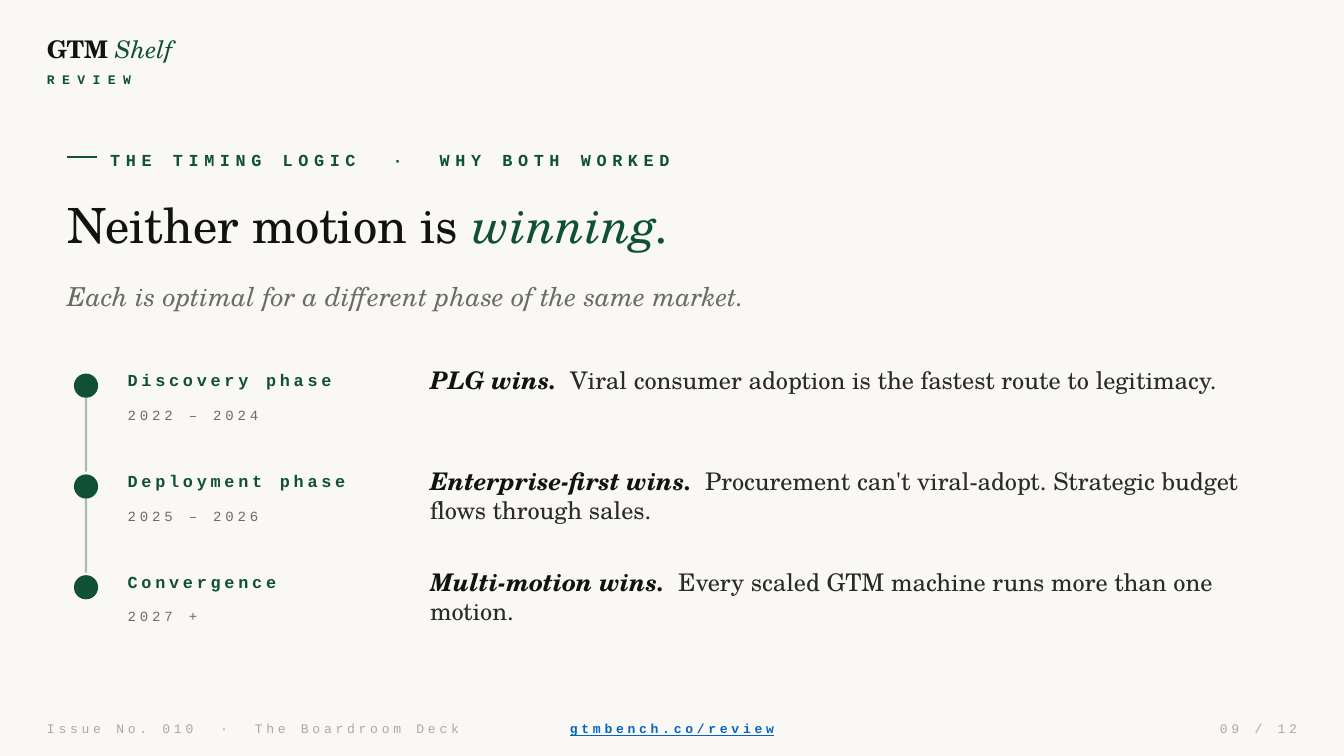
from dataclasses import dataclass

from lxml.etree import SubElement
from pptx import Presentation
from pptx.dml.color import RGBColor
from pptx.enum.shapes import MSO_CONNECTOR, MSO_SHAPE
from pptx.enum.text import MSO_ANCHOR, MSO_AUTO_SIZE, PP_ALIGN
from pptx.oxml.ns import qn
from pptx.util import Inches, Pt


@dataclass(frozen=True)
class Theme:
    serif: str = "TeX Gyre Schola"
    mono: str = "Courier New"
    paper: str = "FAF8F4"
    ink: str = "12130F"
    body: str = "2A2B25"
    muted: str = "6B6D63"
    faint: str = "A8AA9E"
    green: str = "0F5132"
    link: str = "0563C1"
    title_size: float = 26
    subtitle_size: float = 14
    body_size: float = 13
    label_size: float = 9
    date_size: float = 7.5
    small_size: float = 7
    rule_width: float = 1.25


T = Theme()

PHASES = [
    ("Discovery phase", "2022 – 2024", "PLG wins.  ",
     "Viral consumer adoption is the fastest route to legitimacy."),
    ("Deployment phase", "2025 – 2026", "Enterprise-first wins.  ",
     "Procurement can't viral-adopt. Strategic budget flows through sales."),
    ("Convergence", "2027 +", "Multi-motion wins.  ",
     "Every scaled GTM machine runs more than one motion."),
]


def write(shape, runs, font, size, anchor=MSO_ANCHOR.MIDDLE,
          align=PP_ALIGN.LEFT, spacing=0):
    """Fill a shape with one paragraph of (text, colour, style letters) runs."""
    tf = shape.text_frame
    tf.word_wrap = True
    tf.auto_size = MSO_AUTO_SIZE.NONE
    tf.vertical_anchor = anchor
    tf.margin_left = tf.margin_right = tf.margin_top = tf.margin_bottom = 0
    p = tf.paragraphs[0]
    p.alignment = align
    p.font.name, p.font.size = font, Pt(size)
    for text, color, style in runs:
        r = p.add_run()
        r.text = text
        r.font.name, r.font.size = font, Pt(size)
        r.font.color.rgb = RGBColor.from_string(color)
        r.font.bold = "b" in style
        r.font.italic = "i" in style
        r.font.underline = "u" in style
        if spacing:
            r.font._element.set("spc", str(spacing * 100))


def add_text(s, x, y, w, h, runs, font, size, **options):
    box = s.shapes.add_textbox(Inches(x), Inches(y), Inches(w), Inches(h))
    write(box, runs, font, size, **options)


def add_rule(s, x1, y1, x2, y2, opacity=100):
    rule = s.shapes.add_connector(MSO_CONNECTOR.STRAIGHT, Inches(x1), Inches(y1),
                                  Inches(x2), Inches(y2))
    rule.line.color.rgb = RGBColor.from_string(T.green)
    rule.line.width = Pt(T.rule_width)
    sp_pr = rule._element.spPr
    if opacity < 100:
        color = sp_pr.find(".//" + qn("a:srgbClr"))
        SubElement(color, qn("a:alpha")).set("val", str(opacity * 1000))
    SubElement(sp_pr, qn("a:effectLst"))


def add_masthead(s, x, y, w):
    add_text(s, x, y, w, 0.28, [("GTM ", T.ink, "b"), ("Shelf", T.green, "i")],
             T.serif, T.body_size)
    add_text(s, x, y + 0.26, w, 0.22, [("REVIEW", T.green, "b")],
             T.mono, T.small_size, spacing=4)


def add_heading(s, x, y, w):
    # Kicker with a short dash
    add_rule(s, x, y + 0.09, x + 0.22, y + 0.09)
    add_text(s, x + 0.32, y, 6, 0.22,
             [("THE TIMING LOGIC  ·  WHY BOTH WORKED", T.green, "b")],
             T.mono, T.label_size, spacing=3)
    # Title
    title = s.shapes.title
    title.left, title.top = Inches(x), Inches(y + 0.37)
    title.width, title.height = Inches(w), Inches(0.55)
    write(title, [("Neither motion is ", T.ink, ""), ("winning.", T.green, "i")],
          T.serif, T.title_size, anchor=MSO_ANCHOR.TOP)
    # Subtitle
    add_text(s, x, y + 0.97, w, 0.3,
             [("Each is optimal for a different phase of the same market.",
               T.muted, "i")], T.serif, T.subtitle_size)


def add_phase(s, x, y, w, phase):
    name, dates, verdict, reason = phase
    dot = s.shapes.add_shape(MSO_SHAPE.OVAL, Inches(x + 0.05), Inches(y + 0.1),
                             Inches(0.18), Inches(0.18))
    dot.shadow.inherit = False
    dot.fill.solid()
    dot.fill.fore_color.rgb = RGBColor.from_string(T.green)
    dot.line.fill.background()
    add_text(s, x + 0.45, y, 2.1, 0.3, [(name, T.green, "b")],
             T.mono, T.label_size, spacing=2)
    add_text(s, x + 0.45, y + 0.28, 2.1, 0.25, [(dates, T.muted, "")],
             T.mono, T.date_size, spacing=2)
    add_text(s, x + 2.7, y + 0.04, w - 2.7, 0.55,
             [(verdict, T.ink, "bi"), (reason, T.body, "")],
             T.serif, T.body_size, anchor=MSO_ANCHOR.TOP)


def add_timeline(s, x, y, w, pitch):
    for i, phase in enumerate(PHASES):
        top = y + i * pitch
        add_phase(s, x, top, w, phase)
        if i < len(PHASES) - 1:
            add_rule(s, x + 0.14, top + 0.28, x + 0.14, top + 0.83, opacity=35)


def add_footer(s, x, y, w):
    right_w = 2.15
    parts = [
        (x, 4.5, "Issue No. 010  ·  The Boardroom Deck", T.faint, "", PP_ALIGN.LEFT),
        (x + w / 2 - 1.5, 3, "gtmbench.co/review", T.link, "bu", PP_ALIGN.CENTER),
        (x + w - right_w, right_w, "09 / 12", T.faint, "", PP_ALIGN.RIGHT),
    ]
    for left, width, text, color, style, align in parts:
        add_text(s, left, y, width, 0.2, [(text, color, style)],
                 T.mono, T.small_size, align=align, spacing=2)


def main():
    prs = Presentation()
    # Widescreen, 16:9
    prs.slide_width = Inches(10)
    prs.slide_height = prs.slide_width * 9 // 16
    s = prs.slides.add_slide(prs.slide_layouts[5])
    s.background.fill.solid()
    s.background.fill.fore_color.rgb = RGBColor.from_string(T.paper)
    add_masthead(s, 0.35, 0.22, 2)
    add_heading(s, 0.5, 1.08, 9)
    add_timeline(s, 0.5, 2.68, 9, 0.75)
    add_footer(s, 0.35, 5.32, 9.3)
    prs.save("out.pptx")


if __name__ == "__main__":
    main()
